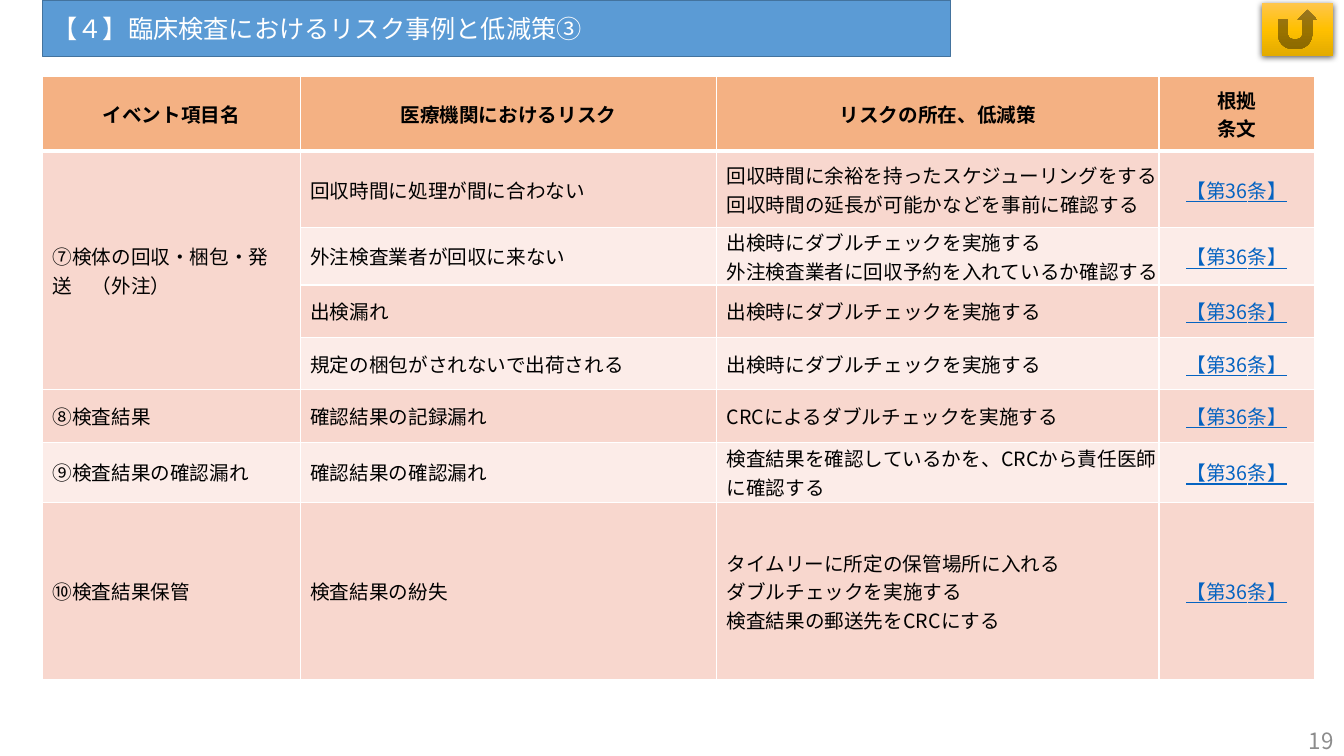
from lxml.etree import SubElement
from pptx import Presentation
from pptx.dml.color import RGBColor
from pptx.enum.shapes import MSO_SHAPE
from pptx.enum.text import MSO_ANCHOR, MSO_AUTO_SIZE, PP_ALIGN
from pptx.oxml import parse_xml
from pptx.oxml.ns import nsdecls, qn
from pptx.util import Cm, Pt

# Content
FONT = "Noto Sans CJK JP"
TITLE = "【４】臨床検査におけるリスク事例と低減策③"
PAGE = "19"
HEADER = ("イベント項目名", "医療機関におけるリスク", "リスクの所在、低減策", "根拠\n条文")
ARTICLE = "【第36条】"
DOUBLE_CHECK = "出検時にダブルチェックを実施する"
# event, [(risk, measures, row height in cm)]
EVENTS = [
    ("⑦検体の回収・梱包・発送　（外注）", [
        ("回収時間に処理が間に合わない",
         "回収時間に余裕を持ったスケジューリングをする\n回収時間の延長が可能かなどを事前に確認する", 1.93),
        ("外注検査業者が回収に来ない",
         DOUBLE_CHECK + "\n外注検査業者に回収予約を入れているか確認する", 1.32),
        ("出検漏れ", DOUBLE_CHECK, 1.32),
        ("規定の梱包がされないで出荷される", DOUBLE_CHECK, 1.32),
    ]),
    ("⑧検査結果", [("確認結果の記録漏れ", "CRCによるダブルチェックを実施する", 1.32)]),
    ("⑨検査結果の確認漏れ",
     [("確認結果の確認漏れ", "検査結果を確認しているかを、CRCから責任医師に確認する", 1.52)]),
    ("⑩検査結果保管",
     [("検査結果の紛失",
       "タイムリーに所定の保管場所に入れる\nダブルチェックを実施する\n検査結果の郵送先をCRCにする", 4.47)]),
]
COL_WIDTHS = (6.5, 10.49, 11.15, 3.91)
HEADER_HEIGHT = 1.88
HEADER_FILL, BANDS = "F4B183", ("F8D7CE", "FCECE8")


def color(hex_code):
    return RGBColor.from_string(hex_code)


def write(tf, text, size, hex_code, align=PP_ALIGN.LEFT, bold=False, underline=False):
    tf.text = text
    for p in tf.paragraphs:
        p.alignment = align
        f = p.font
        f.name, f.size, f.bold, f.underline = FONT, Pt(size), bold, underline
        f.color.rgb = color(hex_code)
        east_asian = SubElement(p._p.pPr.find(qn("a:defRPr")), qn("a:ea"))
        east_asian.set("typeface", FONT)


def set_borders(cell, top, bottom):
    tcPr = cell._tc.get_or_add_tcPr()
    for i, (side, width) in enumerate(zip("LRTB", (1, 1, top, bottom))):
        tcPr.insert(i, parse_xml(
            f'<a:ln{side} {nsdecls("a")} w="{Pt(width)}"><a:solidFill>'
            f'<a:srgbClr val="FFFFFF"/></a:solidFill></a:ln{side}>'))


prs = Presentation()
prs.slide_width, prs.slide_height = Cm(33.87), Cm(19.05)
s = prs.slides.add_slide(prs.slide_layouts[5])

# Return button
button = s.shapes.add_shape(MSO_SHAPE.ACTION_BUTTON_RETURN,
                            Cm(31.8), Cm(0.08), Cm(1.8), Cm(1.32))
button.line.fill.background()
stops = "".join(f'<a:gs pos="{pos}"><a:srgbClr val="{c}"/></a:gs>' for pos, c in
                ((0, "FFC64B"), (50000, "FFC000"), (100000, "E3AB00")))
spPr = button._element.spPr
spPr.insert(2, parse_xml(f'<a:gradFill {nsdecls("a")} rotWithShape="1"><a:gsLst>{stops}</a:gsLst>'
                         '<a:lin ang="5400000" scaled="0"/></a:gradFill>'))
spPr.append(parse_xml(
    f'<a:effectLst {nsdecls("a")}><a:outerShdw blurRad="{Pt(4.5)}" dist="{Pt(1.5)}" '
    'dir="5400000" algn="ctr" rotWithShape="0"><a:srgbClr val="000000">'
    '<a:alpha val="63000"/></a:srgbClr></a:outerShdw></a:effectLst>'))

# Title bar
title = s.shapes.title
title.left, title.top, title.width, title.height = Cm(1.07), Cm(0), Cm(22.89), Cm(1.42)
title.fill.solid()
title.fill.fore_color.rgb = color("5B9BD5")
title.line.color.rgb = color("43739E")
title.line.width = Pt(1)
tf = title.text_frame
tf.auto_size = MSO_AUTO_SIZE.NONE
tf.vertical_anchor = MSO_ANCHOR.MIDDLE
write(tf, TITLE, 18, "FFFFFF")

# Table rows and heights
rows, heights, merges = [HEADER], [HEADER_HEIGHT], []
for event, risks in EVENTS:
    merges.append((len(rows), len(rows) + len(risks) - 1))
    for i, (risk, measures, height) in enumerate(risks):
        rows.append(("" if i else event, risk, measures, ARTICLE))
        heights.append(height)

table = s.shapes.add_table(len(rows), len(COL_WIDTHS), Cm(1.07), Cm(1.93),
                           Cm(sum(COL_WIDTHS)), Cm(sum(heights))).table
for column, width in zip(table.columns, COL_WIDTHS):
    column.width = Cm(width)
for row, height in zip(table.rows, heights):
    row.height = Cm(height)

# Table cells
for r, texts in enumerate(rows):
    for c, text in enumerate(texts):
        cell = table.cell(r, c)
        is_header, is_article = r == 0, r > 0 and c == 3
        cell.vertical_anchor = MSO_ANCHOR.MIDDLE
        if c in (1, 2):
            cell.margin_left = Cm(0 if is_header else 0.25)
            cell.margin_right = cell.margin_top = cell.margin_bottom = 0
        write(cell.text_frame, text, 14, "0563C1" if is_article else "000000",
              PP_ALIGN.CENTER if is_header or is_article else PP_ALIGN.LEFT,
              bold=is_header, underline=is_article)
        cell.fill.solid()
        cell.fill.fore_color.rgb = color(HEADER_FILL if is_header else BANDS[(r - 1) % 2])
        set_borders(cell, top=3 if r == 1 else 1, bottom=3 if is_header else 1)
for first, last in merges:
    if last > first:
        table.cell(first, 0).merge(table.cell(last, 0))

# Page number
tf = s.shapes.add_textbox(Cm(26.24), Cm(18.16), Cm(7.62), Cm(1.02)).text_frame
tf.word_wrap = True
tf.vertical_anchor = MSO_ANCHOR.MIDDLE
write(tf, PAGE, 16, "8C8C8C", PP_ALIGN.RIGHT)

prs.save("out.pptx")
